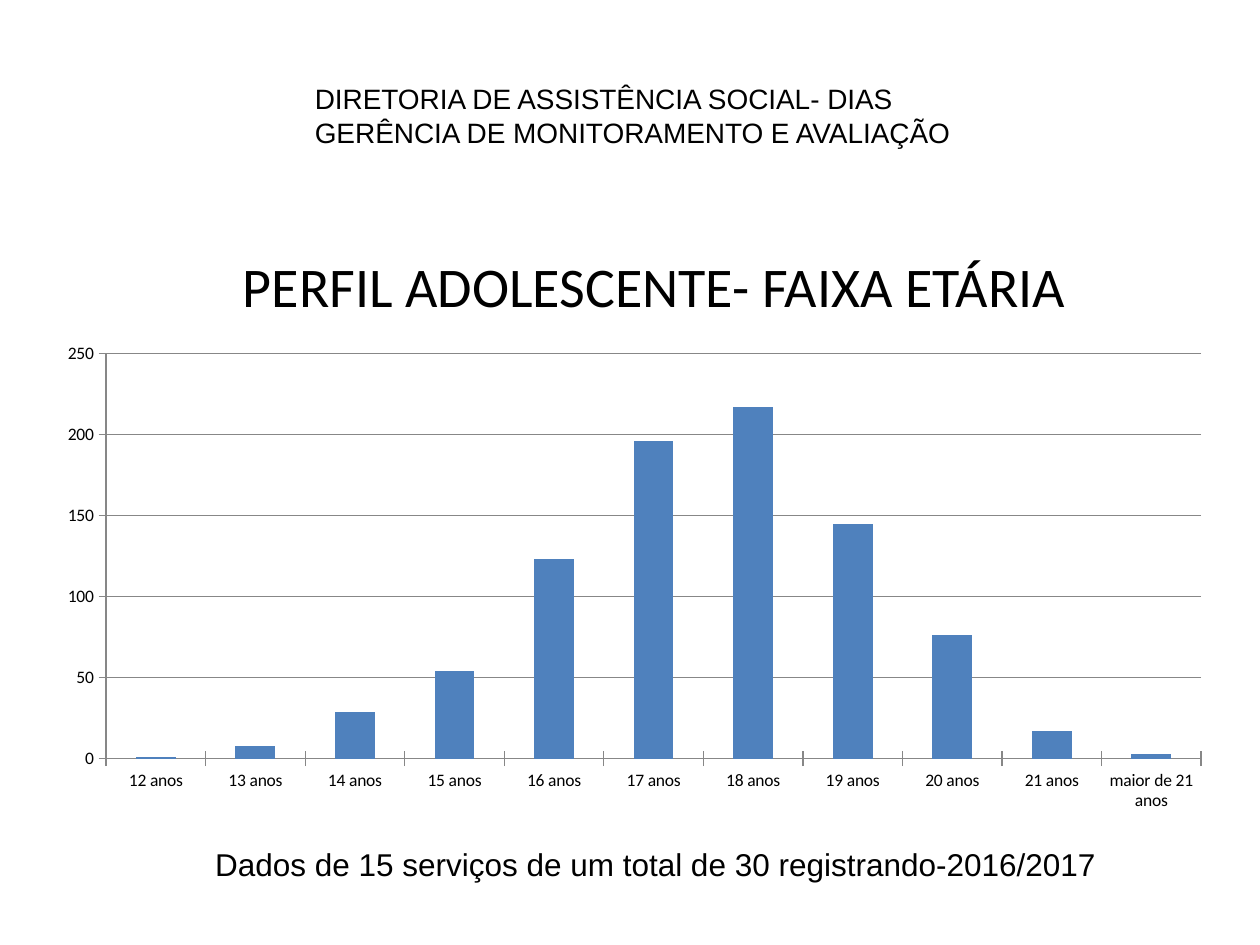
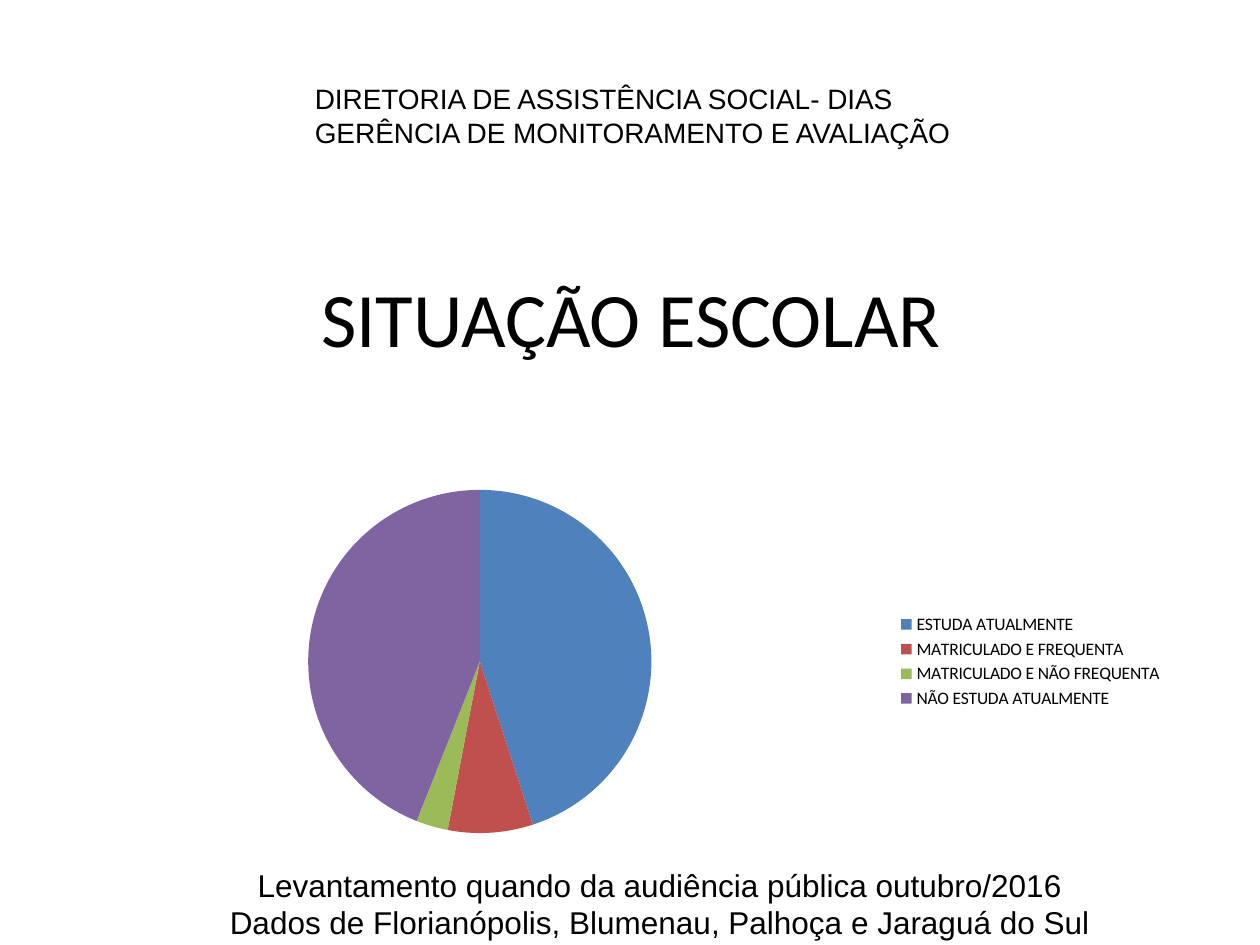
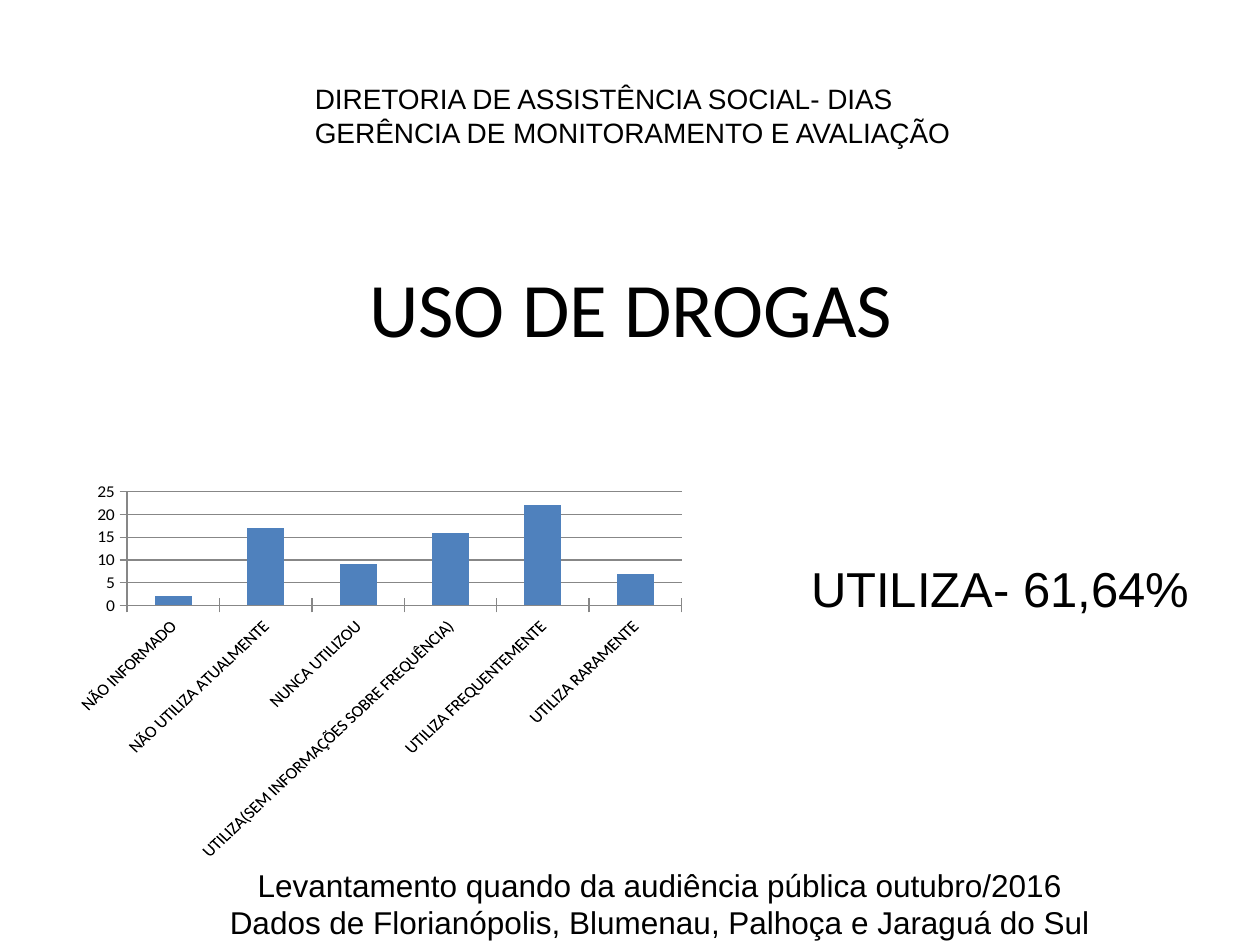
import pptx
import pptx.util
import pptx.chart.data
import pptx.dml.color
import pptx.enum.chart
import pptx.enum.text

Inches = pptx.util.Inches
Pt = pptx.util.Pt
RGBColor = pptx.dml.color.RGBColor
XL = pptx.enum.chart.XL_CHART_TYPE
LEFT = pptx.enum.text.PP_ALIGN.LEFT
CENTER = pptx.enum.text.PP_ALIGN.CENTER

BLACK = RGBColor(0x00, 0x00, 0x00)
GRAY = RGBColor(0x87, 0x87, 0x87)
BLUE = RGBColor(0x4F, 0x81, 0xBD)
RED = RGBColor(0xC0, 0x50, 0x4D)
GREEN = RGBColor(0x9B, 0xBB, 0x59)
PURPLE = RGBColor(0x80, 0x64, 0xA2)

HEADER = ["DIRETORIA DE ASSISTÊNCIA SOCIAL- DIAS", "GERÊNCIA DE MONITORAMENTO E AVALIAÇÃO"]
SURVEY = ["Levantamento quando da audiência pública outubro/2016",
          "Dados de Florianópolis, Blumenau, Palhoça e Jaraguá do Sul"]
SURVEY_BOX = (1.14, 6.82, 8.19, 0.71)


def add_text(s, box, lines, size, align=LEFT, font="Arial"):
    tf = s.shapes.add_textbox(*map(Inches, box)).text_frame
    tf.word_wrap = True
    tf.text = "\n".join(lines)
    for p in tf.paragraphs:
        p.alignment = align
        p.font.name = font
        p.font.size = Pt(size)
        p.font.color.rgb = BLACK


def add_chart(s, kind, box, values):
    data = pptx.chart.data.CategoryChartData()
    data.categories = list(values)
    data.add_series("Series 1", list(values.values()))
    chart = s.shapes.add_chart(kind, *map(Inches, box), data).chart
    chart.has_title = False
    chart.font.name = "Calibri"
    chart.font.size = Pt(10)
    chart.font.color.rgb = BLACK
    plot = chart.plots[0]
    series = plot.series[0]
    chart.has_legend = kind == XL.PIE
    if kind == XL.PIE:
        plot.vary_by_categories = True
        chart.legend.position = pptx.enum.chart.XL_LEGEND_POSITION.RIGHT
        chart.legend.include_in_layout = False
        for i, color in enumerate([BLUE, RED, GREEN, PURPLE]):
            fill = series.points[i].format.fill
            fill.solid()
            fill.fore_color.rgb = color
        return
    plot.vary_by_categories = False
    plot.gap_width = 150
    series.format.fill.solid()
    series.format.fill.fore_color.rgb = BLUE
    chart.value_axis.has_major_gridlines = True
    for axis in (chart.category_axis, chart.value_axis):
        axis.major_tick_mark = pptx.enum.chart.XL_TICK_MARK.CROSS
        axis.format.line.color.rgb = GRAY
        axis.format.line.width = Pt(0.75)
    grid = chart.value_axis.major_gridlines.format.line
    grid.color.rgb = GRAY
    grid.width = Pt(0.75)


ages = dict(zip([f"{age} anos" for age in range(12, 22)] + ["maior de 21 anos"],
                [1, 8, 29, 54, 123, 196, 217, 145, 76, 17, 3]))
schooling = {
    "ESTUDA ATUALMENTE": 45,
    "MATRICULADO E FREQUENTA": 8,
    "MATRICULADO E NÃO FREQUENTA": 3,
    "NÃO ESTUDA ATUALMENTE": 44,
}
drug_use = {
    "NÃO INFORMADO": 2,
    "NÃO UTILIZA ATUALMENTE": 17,
    "NUNCA UTILIZOU": 9,
    "UTILIZA(SEM INFORMAÇÕES SOBRE FREQUÊNCIA)": 16,
    "UTILIZA FREQUENTEMENTE": 22,
    "UTILIZA RARAMENTE": 7,
}

slides = [
    ("PERFIL ADOLESCENTE- FAIXA ETÁRIA", 32, (0.39, 1.95, 9.61, 0.85),
     XL.COLUMN_CLUSTERED, (0.35, 2.65, 9.37, 3.86), ages),
    ("SITUAÇÃO ESCOLAR", 44, (0.51, 2.1, 9, 1.25),
     XL.PIE, (0.51, 3.75, 8.82, 3), schooling),
    ("USO DE DROGAS", 44, (0.51, 2.02, 9, 1.25),
     XL.COLUMN_CLUSTERED, (0.51, 3.83, 5, 3), drug_use),
]

prs = pptx.Presentation()
prs.slide_width = Inches(10)
prs.slide_height = Inches(7.5)

for title, size, title_box, kind, chart_box, values in slides:
    s = prs.slides.add_slide(prs.slide_layouts[6])
    add_text(s, (2.4, 0.6, 5.28, 0.64), HEADER, 16)
    add_text(s, title_box, [title], size, CENTER, "Calibri")
    add_chart(s, kind, chart_box, values)
    if values is ages:
        add_text(s, (1.61, 6.66, 7.64, 0.4),
                 ["Dados de 15 serviços de um total de 30 registrando-2016/2017"], 18)
    else:
        add_text(s, SURVEY_BOX, SURVEY, 18, CENTER)
    if values is drug_use:
        add_text(s, (6.34, 4.38, 3.23, 0.57), ["UTILIZA- 61,64%"], 28)

prs.save("out.pptx")
